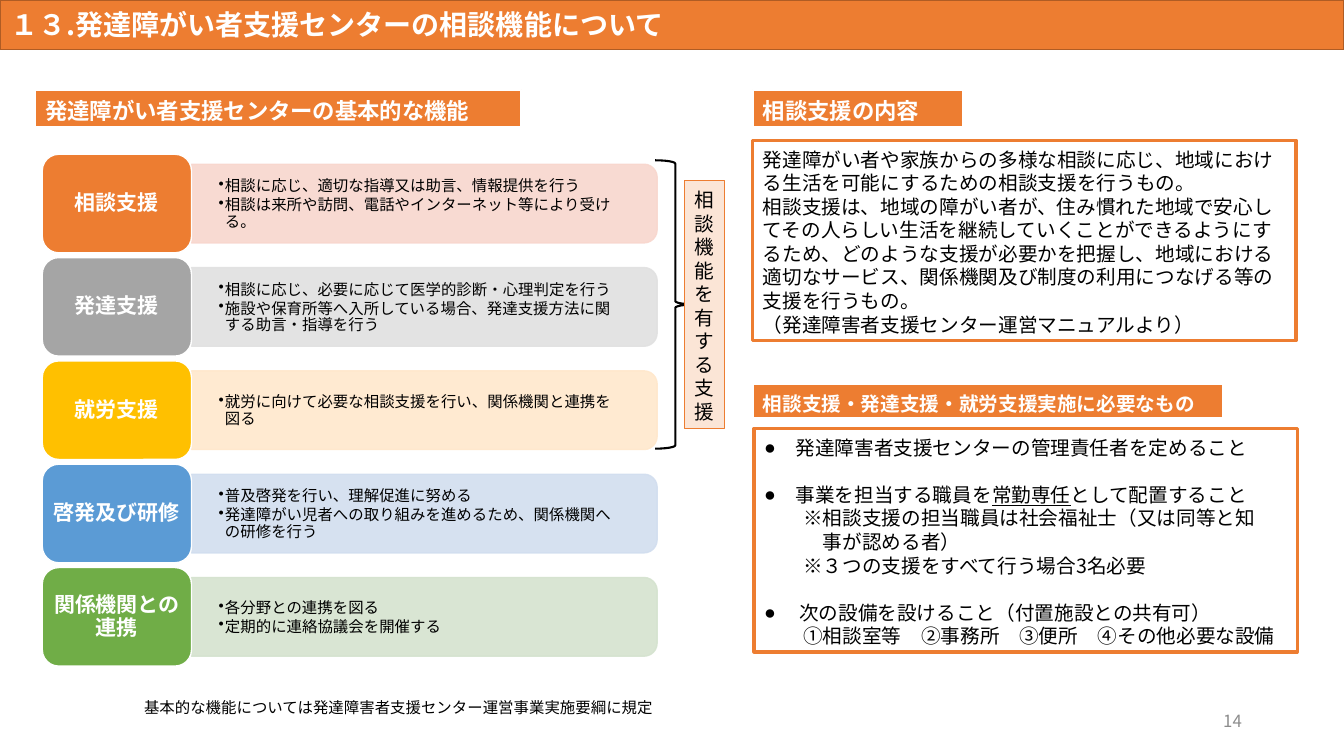
from dataclasses import dataclass

from lxml.etree import SubElement
from pptx import Presentation
from pptx.dml.color import RGBColor
from pptx.enum.lang import MSO_LANGUAGE_ID as LANG
from pptx.enum.shapes import MSO_SHAPE as SHAPE
from pptx.enum.text import MSO_ANCHOR as ANCHOR, MSO_AUTO_SIZE as AUTO, PP_ALIGN as ALIGN
from pptx.oxml.ns import qn
from pptx.util import Pt


@dataclass(frozen=True)
class Theme:
    """Colours, font and type sizes of the slide."""
    font: str = "Noto Sans CJK JP"
    orange: str = "ED7D31"
    rust: str = "AF5C24"
    cream: str = "FBE5D6"
    white: str = "FFFFFF"
    black: str = "000000"
    grey: str = "8C8C8C"
    title: float = 20
    heading: float = 16
    label: float = 15
    body: float = 14
    number: float = 12
    small: float = 11


T = Theme()
LEADING = {T.title: 24, T.heading: 19, T.label: 16, T.body: 16.8, T.number: 14, T.small: 12}

FUNCTIONS = [
    ("相談支援", "ED7D31", "F8D7CE", ["相談に応じ、適切な指導又は助言、情報提供を行う",
                                  "相談は来所や訪問、電話やインターネット等により受ける。"]),
    ("発達支援", "A5A5A5", "E1E1E1", ["相談に応じ、必要に応じて医学的診断・心理判定を行う",
                                  "施設や保育所等へ入所している場合、発達支援方法に関する助言・指導を行う"]),
    ("就労支援", "FFC000", "FFE8CC", ["就労に向けて必要な相談支援を行い、関係機関と連携を図る"]),
    ("啓発及び研修", "5B9BD5", "D2DEEF", ["普及啓発を行い、理解促進に努める",
                                    "発達障がい児者への取り組みを進めるため、関係機関への研修を行う"]),
    ("関係機関との連携", "70AD47", "D5E3CF", ["各分野との連携を図る", "定期的に連絡協議会を開催する"]),
]
CONSULTATION = [
    "発達障がい者や家族からの多様な相談に応じ、地域における生活を可能にするための相談支援を行うもの。",
    "相談支援は、地域の障がい者が、住み慣れた地域で安心してその人らしい生活を継続していくことができるようにするため、"
    "どのような支援が必要かを把握し、地域における適切なサービス、関係機関及び制度の利用につなげる等の支援を行うもの。",
    "（発達障害者支援センター運営マニュアルより）",
]
ITEM = {"bullet": "●", "margin": 22.4, "indent": -22.4}
NEXT_ITEM = {**ITEM, "before": LEADING[T.body]}
REQUIREMENTS = [
    ("発達障害者支援センターの管理責任者を定めること", ITEM),
    (["事業を担当する職員を", ("常勤専任", True), "として配置すること"], NEXT_ITEM),
    ("※相談支援の担当職員は社会福祉士（又は同等と知", {"margin": 28}),
    ("事が認める者）", {"margin": 42}),
    ("※３つの支援をすべて行う場合3名必要", {"margin": 28}),
    ("次の設備を設けること（付置施設との共有可）", {**NEXT_ITEM, "margin": 25, "indent": -25}),
    ("①相談室等　②事務所　③便所　④その他必要な設備", {"margin": 28}),
]


def rgb(color):
    """Turn a hex string into a colour."""
    return RGBColor.from_string(color)


def apply(obj, formats):
    """Set each attribute named in a dict of format values."""
    for name, value in formats.items():
        setattr(obj, name, value)


def place(sp, box):
    """Move and size a shape to left, top, width, height in points."""
    apply(sp, dict(zip(("left", "top", "width", "height"), map(Pt, box))))


def paint(sp, fill, line, width):
    """Give a shape its fill and outline."""
    if fill:
        sp.fill.solid()
        sp.fill.fore_color.rgb = rgb(fill)
    sp.line.color.rgb = rgb(line)
    sp.line.width = Pt(width)


def add_run(p, text, size, color, bold, underline):
    """Add one formatted run to a paragraph."""
    r = p.add_run()
    r.text = text
    apply(r.font, {"name": T.font, "size": Pt(size), "bold": bold, "underline": underline,
                   "language_id": LANG.JAPANESE})
    r.font.color.rgb = rgb(color)
    SubElement(r.font._element, qn("a:ea"), typeface=T.font)


def add_paragraph(p, content, size, color, bold, align, after,
                  bullet=None, margin=0, indent=0, before=0):
    """Fill a paragraph with text, indents and an optional bullet."""
    pPr = p._p.get_or_add_pPr()
    pPr.set("marL", str(Pt(margin)))
    pPr.set("indent", str(Pt(indent)))
    if bullet:
        SubElement(pPr, qn("a:buChar"), char=bullet)
    else:
        SubElement(pPr, qn("a:buNone"))
    apply(p, {"alignment": align, "line_spacing": Pt(LEADING[size]),
              "space_before": Pt(before), "space_after": Pt(after)})
    for part in [content] if isinstance(content, str) else content:
        text, underline = (part, False) if isinstance(part, str) else part
        add_run(p, text, size, color, bold, underline)


def write(sp, items, size, color=T.black, bold=False, align=ALIGN.LEFT, after=0,
          drop=0, side=7.2):
    """Write paragraphs, vertically centred and lowered by drop points."""
    tf = sp.text_frame
    apply(tf, {"word_wrap": True, "auto_size": AUTO.NONE, "vertical_anchor": ANCHOR.MIDDLE,
               "margin_left": Pt(side), "margin_right": Pt(side),
               "margin_top": Pt(2 + 2 * drop), "margin_bottom": Pt(2)})
    for i, item in enumerate(items):
        content, formats = (item, {}) if isinstance(item, str) else item
        p = tf.add_paragraph() if i else tf.paragraphs[0]
        add_paragraph(p, content, size, color, bold, align, after, **formats)


def add_shape(s, kind, box, fill, line, width):
    """Add a painted preset shape without shadow."""
    sp = s.shapes.add_shape(kind, *map(Pt, box))
    sp.shadow.inherit = False
    paint(sp, fill, line, width)
    return sp


def add_text(s, box, items, size, **formats):
    """Add a plain text box."""
    write(s.shapes.add_textbox(*map(Pt, box)), items, size, **formats)


def add_heading(s, box, text, size):
    """Add an orange section heading."""
    sp = add_shape(s, SHAPE.RECTANGLE, box, T.orange, T.white, 1.5)
    write(sp, [text], size, T.white, True, drop=2)


def add_function(s, top, label, color, tint, points):
    """Add one row: a tinted bar with bullets and its coloured label."""
    left, width, height = 136.8, 332.6, 56.2
    middle = top + 35.2
    bar = add_shape(s, SHAPE.ROUND_2_SAME_RECTANGLE,
                    (left + (width - height) / 2, middle - width / 2, height, width),
                    tint, tint, 1)
    bar.rotation = 90
    for clr in bar._element.spPr.iter(qn("a:srgbClr")):
        SubElement(clr, qn("a:alpha"), val="90000")
    bullets = [(text, {"bullet": "•", "margin": 4.5, "indent": -4.5}) for text in points]
    add_text(s, (left, middle - 25.6, 329.8, 51.2), bullets, T.small, after=1.5,
             drop=0.6, side=19.4)
    tag = add_shape(s, SHAPE.ROUNDED_RECTANGLE, (30.2, top, 106.6, 70.4), color, T.white, 1)
    write(tag, [label], T.label, T.white, True, ALIGN.CENTER, side=4)


def main():
    """Build the slide and save it."""
    prs = Presentation()
    apply(prs, {"slide_width": Pt(960), "slide_height": Pt(540)})
    s = prs.slides.add_slide(prs.slide_layouts[1])
    title, body = s.placeholders

    place(title, (0, 0, 960, 35.3))
    paint(title, T.orange, T.rust, 1)
    write(title, ["１３.発達障がい者支援センターの相談機能について"], T.title, T.white, True)

    add_heading(s, (25.2, 64.1, 347, 26.6), "発達障がい者支援センターの基本的な機能", T.heading)
    for i, row in enumerate(FUNCTIONS):
        add_function(s, 110.2 + 73.8 * i, *row)
    add_text(s, (95.8, 494.6, 384.5, 20.9),
             ["基本的な機能については発達障害者支援センター運営事業実施要綱に規定"], T.small, drop=1)

    brace = add_shape(s, SHAPE.RIGHT_BRACE, (468, 114.5, 28.8, 206), None, T.black, 1.5)
    brace.fill.background()
    scope = add_shape(s, SHAPE.RECTANGLE, (488.9, 128.9, 28.8, 177.1), T.cream, T.orange, 1)
    write(scope, ["相談機能を有する支援"], T.body, drop=1)

    add_heading(s, (537.8, 64.1, 150.5, 26.6), "相談支援の内容", T.heading)
    content = add_shape(s, SHAPE.RECTANGLE, (537.8, 100.1, 388, 143.3), T.white, T.orange, 2.25)
    write(content, CONSULTATION, T.body, drop=1)

    add_heading(s, (537.8, 274.3, 336.2, 24.5), "相談支援・発達支援・就労支援実施に必要なもの", T.body)
    place(body, (538.6, 306, 388, 159.8))
    paint(body, T.white, T.orange, 2.25)
    write(body, REQUIREMENTS, T.body, drop=1)

    add_text(s, (678.2, 500.4, 216, 28.8), ["14"], T.number, color=T.grey, align=ALIGN.RIGHT)
    prs.save("out.pptx")


if __name__ == "__main__":
    main()
